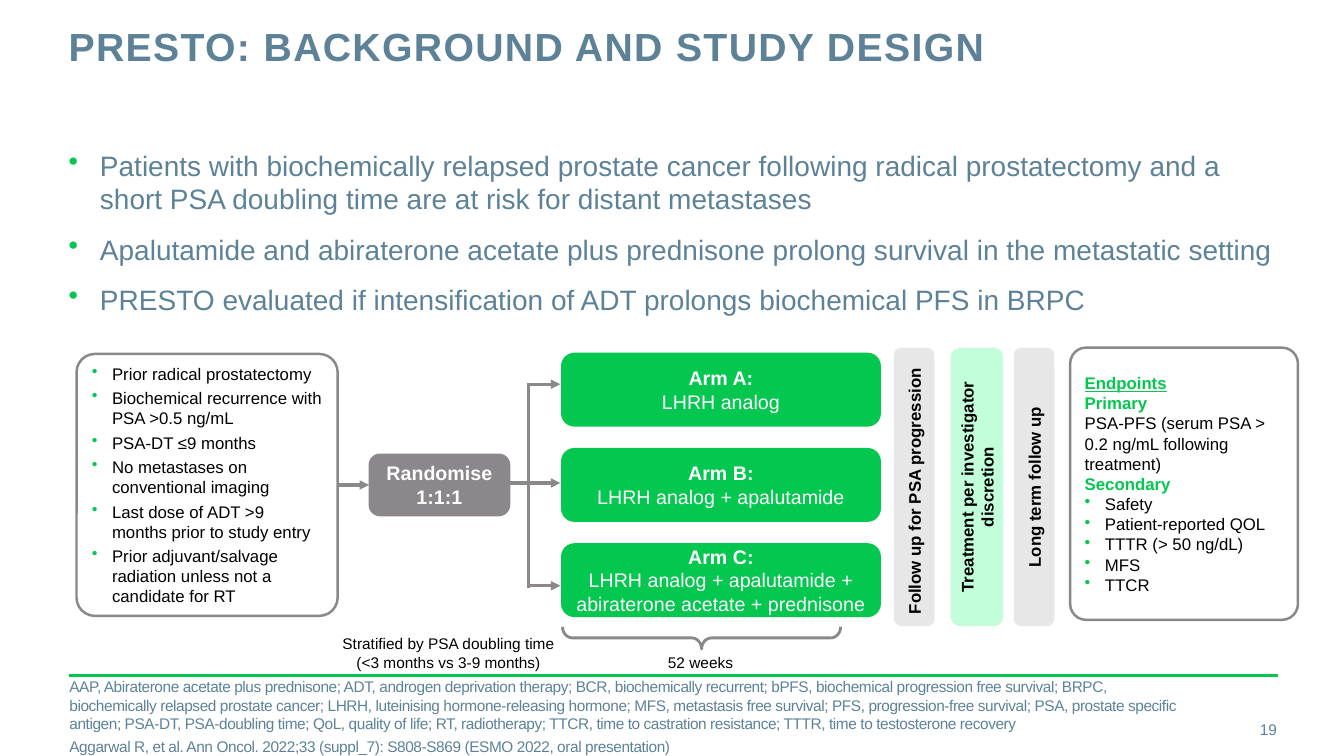
from lxml.etree import SubElement
from pptx import Presentation
from pptx.dml.color import RGBColor
from pptx.enum.shapes import MSO_CONNECTOR, MSO_SHAPE
from pptx.enum.text import MSO_ANCHOR, PP_ALIGN
from pptx.oxml.ns import qn
from pptx.util import Cm, Pt

LEFT, CENTER, RIGHT = PP_ALIGN.LEFT, PP_ALIGN.CENTER, PP_ALIGN.RIGHT
TOP, MIDDLE = MSO_ANCHOR.TOP, MSO_ANCHOR.MIDDLE
ROUNDED, BRACE = MSO_SHAPE.ROUNDED_RECTANGLE, MSO_SHAPE.RIGHT_BRACE
STRAIGHT = MSO_CONNECTOR.STRAIGHT

COLOURS = {
    "green": "03C74F",
    "mint": "C2FED9",
    "slate": "5D8298",
    "grey": "8B878B",
    "pale": "E8E7E8",
    "white": "FFFFFF",
    "black": "000000",
}


class StudySlide:
    def __init__(self, presentation):
        self.font = "Arial"
        self.slide = presentation.slides.add_slide(presentation.slide_layouts[6])

    def colour(self, name):
        return RGBColor.from_string(COLOURS[name])

    def bullet(self, paragraph, indent):
        properties = paragraph._p.get_or_add_pPr()
        properties.set("marL", str(Cm(indent)))
        properties.set("indent", str(-Cm(indent)))
        tint = SubElement(properties, qn("a:buClr"))
        SubElement(tint, qn("a:srgbClr")).set("val", COLOURS["green"])
        SubElement(properties, qn("a:buChar")).set("char", "•")

    def add_text(self, paragraph, text, size, colour, bold=False, underline=False, spacing=0):
        for number, line in enumerate(text.split("\n")):
            if number:
                paragraph.add_line_break()
            if not line:
                continue
            run = paragraph.add_run()
            run.text = line
            font = run.font
            font.name, font.size = self.font, Pt(size)
            font.bold, font.underline = bold, underline
            font.color.rgb = self.colour(colour)
            if spacing:
                run._r.get_or_add_rPr().set("spc", str(spacing))

    def fill_frame(self, frame, paragraphs, size, colour, align=LEFT, anchor=TOP,
                   before=0, after=0, line=None, indent=0, **style):
        frame.word_wrap = True
        frame.vertical_anchor = anchor
        for number, runs in enumerate(paragraphs):
            paragraph = frame.add_paragraph() if number else frame.paragraphs[0]
            runs = [(runs, {})] if isinstance(runs, str) else runs
            base = {"size": size, "colour": colour, **style}
            paragraph_indent = runs[0][1].get("indent", indent)
            if paragraph_indent:
                self.bullet(paragraph, paragraph_indent)
            paragraph.alignment = align
            paragraph.space_before = Pt(before if number else 0)
            paragraph.space_after = Pt(after)
            if line:
                paragraph.line_spacing = Pt(line)
            for text, changes in runs:
                changes = {key: changes[key] for key in changes if key != "indent"}
                self.add_text(paragraph, text, **{**base, **changes})

    def text_box(self, place, paragraphs, size, colour, **style):
        frame = self.slide.shapes.add_textbox(*map(Cm, place)).text_frame
        frame.margin_left = frame.margin_right = 0
        frame.margin_top = frame.margin_bottom = 0
        self.fill_frame(frame, paragraphs, size, colour, **style)

    def shape(self, kind, place, adjustments, fill=None, line=None, width=1.75, rotation=0):
        shape = self.slide.shapes.add_shape(kind, *map(Cm, place))
        shape.shadow.inherit = False
        shape.rotation = rotation
        for number, value in enumerate(adjustments):
            shape.adjustments[number] = value
        if fill:
            shape.fill.solid()
            shape.fill.fore_color.rgb = self.colour(fill)
        else:
            shape.fill.background()
        if line:
            shape.line.color.rgb = self.colour(line)
            shape.line.width = Pt(width)
        else:
            shape.line.fill.background()
        return shape

    def box(self, place, fill, line, paragraphs, size, colour,
            corner=0.17, rotation=0, **style):
        shape = self.shape(ROUNDED, place, [corner], fill, line, rotation=rotation)
        self.fill_frame(shape.text_frame, paragraphs, size, colour, anchor=MIDDLE, **style)

    def connector(self, start, end, colour="grey", width=2.25, arrow=False):
        connector = self.slide.shapes.add_connector(STRAIGHT, *map(Cm, start + end))
        connector.line.color.rgb = self.colour(colour)
        connector.line.width = Pt(width)
        properties = connector._element.spPr
        if arrow:
            SubElement(properties.find(qn("a:ln")), qn("a:tailEnd")).set("type", "triangle")
        SubElement(properties, qn("a:effectLst"))


def main():
    presentation = Presentation()
    presentation.slide_width, presentation.slide_height = Cm(33.87), Cm(19.05)
    study = StudySlide(presentation)

    study.connector((1.73, 17.02), (32.21, 17.02), "green", 2)
    study.text_box((1.73, 3.73, 30.45, 1.75), [
        "Patients with biochemically relapsed prostate cancer following radical "
        "prostatectomy and a short PSA doubling time are at risk for distant metastases",
        "Apalutamide and abiraterone acetate plus prednisone prolong survival "
        "in the metastatic setting",
        "PRESTO evaluated if intensification of ADT prolongs biochemical PFS in BRPC",
    ], 20, "slate", before=12, indent=0.79)
    study.text_box((1.73, 0.69, 24.28, 2.24), ["PRESTO: BACKGROUND AND STUDY DESIGN"],
                   28, "slate", line=30, bold=True, spacing=100)
    study.text_box((30, 17.86, 2.18, 1.02), ["19"], 11, "slate", align=RIGHT, anchor=MIDDLE)
    study.text_box((1.75, 17.55, 28.02, 1.02), [
        "AAP, Abiraterone acetate plus prednisone; ADT, androgen deprivation therapy; "
        "BCR, biochemically recurrent; bPFS, biochemical progression free survival; "
        "BRPC, biochemically relapsed prostate cancer; LHRH, luteinising "
        "hormone-releasing hormone; MFS, metastasis free survival; PFS, "
        "progression-free survival; PSA, prostate specific antigen; PSA-DT, "
        "PSA-doubling time; QoL, quality of life; RT, radiotherapy; TTCR, time to "
        "castration resistance; TTTR, time to testosterone recovery",
        "Aggarwal R, et al. Ann Oncol. 2022;33 (suppl_7): S808-S869 "
        "(ESMO 2022, oral presentation)",
    ], 11, "slate", anchor=MIDDLE, before=3, spacing=-30)

    study.text_box((8.28, 15.98, 6.05, 0.94),
                   ["Stratified by PSA doubling time\n(<3 months vs 3-9 months)"],
                   11, "black", align=CENTER)
    study.box((9.32, 11.46, 3.51, 1.52), "grey", "grey", ["Randomise\n1:1:1"],
              14, "white", align=CENTER, after=3, bold=True)
    study.connector((8.05, 12.22), (9.3, 12.22), arrow=True)
    study.box((1.93, 8.92, 6.58, 6.6), "white", "grey", [
        "Prior radical prostatectomy",
        "Biochemical recurrence with PSA >0.5 ng/mL",
        "PSA-DT ≤9 months",
        "No metastases on conventional imaging",
        "Last dose of ADT >9 months prior to study entry",
        "Prior adjuvant/salvage radiation unless not a candidate for RT",
    ], 12, "black", corner=0.07, after=3, indent=0.51)

    arms = [
        ("Arm A:", "LHRH analog", 9.68),
        ("Arm B:", "LHRH analog + apalutamide", 12.17),
        ("Arm C:", "LHRH analog + apalutamide +\nabiraterone acetate + prednisone", 14.76),
    ]
    for number, (name, treatment, arrow_y) in enumerate(arms):
        study.box((14.17, 8.92 + 2.4 * number, 8, 1.8), "green", "green",
                  [[(name + "\n", {"bold": True}), (treatment, {})]],
                  14, "white", align=CENTER, after=3)
        study.connector((13.31, arrow_y), (14.12, arrow_y), arrow=True)

    study.shape(BRACE, (17.4, 12.57, 0.56, 7.01), [0.445, 0.5],
                line="grey", width=2, rotation=90)
    study.text_box((14.63, 16.46, 6.05, 0.48), ["52 weeks"], 11, "black", align=CENTER)
    study.connector((12.14, 12.17), (13.72, 12.17))
    study.connector((13.31, 14.81), (13.31, 9.65))

    phases = [
        ("Follow up for PSA progression", 23.04, 1.02, "pale", LEFT),
        ("Treatment per investigator discretion", 24.62, 1.32, "mint", CENTER),
        ("Long term follow up", 26.06, 1.02, "pale", CENTER),
    ]
    length, middle = 7.01, 12.27
    for name, center, thickness, fill, align in phases:
        place = (center - length / 2, middle - thickness / 2, length, thickness)
        study.box(place, fill, None, [name], 12, "black", rotation=270,
                  align=align, after=3, bold=True)

    heading = {"colour": "green", "bold": True}
    secondary = ["Safety", "Patient-reported QOL", "TTTR (> 50 ng/dL)", "MFS", "TTCR"]
    study.box((26.97, 8.76, 5.74, 6.86), "white", "grey", [
        [("Endpoints", {**heading, "underline": True})],
        [("Primary", heading)],
        "PSA-PFS (serum PSA > 0.2 ng/mL following treatment)",
        [("Secondary", heading)],
        *[[(endpoint, {"indent": 0.51})] for endpoint in secondary],
    ], 12, "black", corner=0.07)

    presentation.save("out.pptx")


if __name__ == "__main__":
    main()
